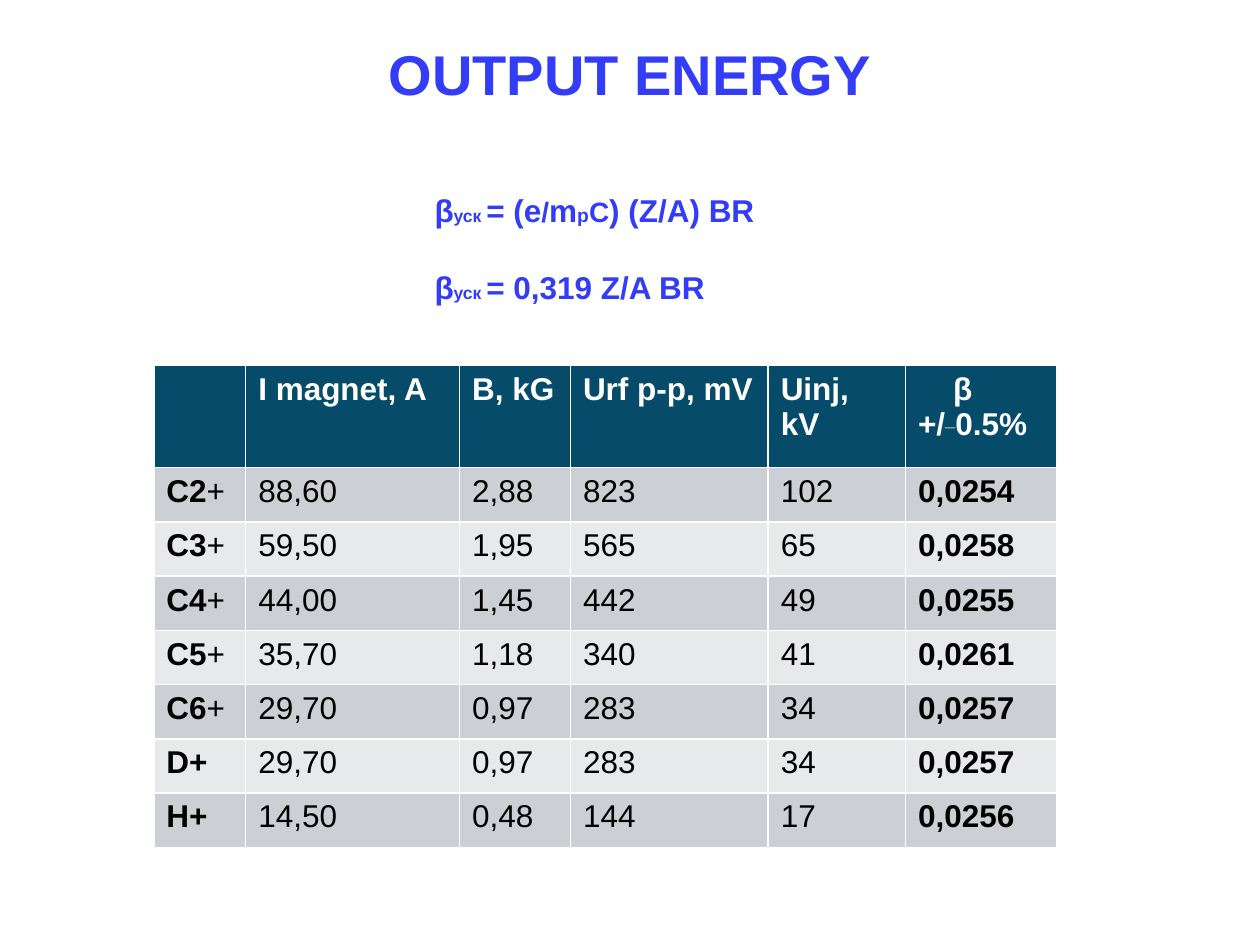
import pptx
import pptx.util
import pptx.dml.color
import pptx.enum.text

Pt = pptx.util.Pt
BLUE, NAVY, WHITE, BLACK = "333CF7", "064B6A", "FFFFFF", "000000"
BANDS = ("CCD0D4", "E7E9EB")

# Content: a line is a list of (text, format) runs
TITLE = "OUTPUT ENERGY"
BETA = [("β", {}), ("уск ", {"size": 10})]
LINES = [
    BETA + [("= (e", {}), ("/", {"size": 16}), ("m", {}), ("p", {"size": 11}),
            ("C", {"size": 16}), (") (Z/A) BR", {})],
    BETA + [("= 0,319 Z/A BR", {})],
]
HEADS = ["", "I magnet, A", "B, kG", "Urf p-p, mV", "Uinj, kV", "β"]
LIMIT = [("+/", {}), ("_", {"base": 30}), ("0.5%", {})]
ROWS = [
    ("C2+", "88,60", "2,88", "823", "102", "0,0254"),
    ("C3+", "59,50", "1,95", "565", "65", "0,0258"),
    ("C4+", "44,00", "1,45", "442", "49", "0,0255"),
    ("C5+", "35,70", "1,18", "340", "41", "0,0261"),
    ("C6+", "29,70", "0,97", "283", "34", "0,0257"),
    ("D+", "29,70", "0,97", "283", "34", "0,0257"),
    ("H+", "14,50", "0,48", "144", "17", "0,0256"),
]
WIDTHS = (52.5, 122.2, 63.4, 113, 78.5, 86.4)
HEAD, ROW = 58.3, 31


def paint(target, code):
    target.rgb = pptx.dml.color.RGBColor.from_string(code)


def write(par, text, size=18, color=BLACK, bold=True, base=0):
    run = par.add_run()
    run.text = text
    font = run.font
    font.name, font.size, font.bold = "Arial", Pt(size), bold
    paint(font.color, color)
    if base:
        font._element.set("baseline", str(base * 1000))


def shade(cell, code):
    cell.fill.solid()
    paint(cell.fill.fore_color, code)


deck = pptx.Presentation()
deck.slide_width, deck.slide_height = Pt(720), Pt(540)
slide = deck.slides.add_slide(deck.slide_layouts[5])

# Title
title = slide.shapes.title
title.left, title.top, title.width, title.height = Pt(36), Pt(21.6), Pt(648), Pt(40.3)
frame = title.text_frame
frame.vertical_anchor = pptx.enum.text.MSO_ANCHOR.MIDDLE
frame.paragraphs[0].alignment = pptx.enum.text.PP_ALIGN.CENTER
write(frame.paragraphs[0], TITLE, size=32, color=BLUE)

# Formulas
frame = slide.shapes.add_textbox(Pt(241.2), Pt(105.8), Pt(214.6), Pt(94.3)).text_frame
frame.word_wrap = True
for i, line in enumerate(LINES):
    par = frame.add_paragraph() if i else frame.paragraphs[0]
    if i:
        par.space_before = Pt(22)
    for text, form in line:
        write(par, text, color=BLUE, **form)

# Table
table = slide.shapes.add_table(
    len(ROWS) + 1, len(WIDTHS), Pt(87.9), Pt(209),
    Pt(sum(WIDTHS)), Pt(HEAD + ROW * len(ROWS))).table
for col, width in zip(table.columns, WIDTHS):
    col.width = Pt(width)
for i, row in enumerate(table.rows):
    row.height = Pt(ROW if i else HEAD)

# Header row; the last head has an indented symbol over its limit
for j, text in enumerate(HEADS):
    cell = table.cell(0, j)
    shade(cell, NAVY)
    if text:
        write(cell.text_frame.paragraphs[0], text, color=WHITE)
cell.text_frame.paragraphs[0]._p.get_or_add_pPr().set("marL", str(Pt(20)))
par = cell.text_frame.add_paragraph()
for text, form in LIMIT:
    write(par, text, color=WHITE, **form)

# Body rows; carbon ions have a light plus sign
last = len(WIDTHS) - 1
for i, row in enumerate(ROWS):
    for j, text in enumerate(row):
        cell = table.cell(i + 1, j)
        shade(cell, BANDS[i % 2])
        par = cell.text_frame.paragraphs[0]
        if text.startswith("C"):
            write(par, text[:-1])
            write(par, text[-1], bold=False)
        else:
            write(par, text, bold=j in (0, last))

deck.save("out.pptx")
